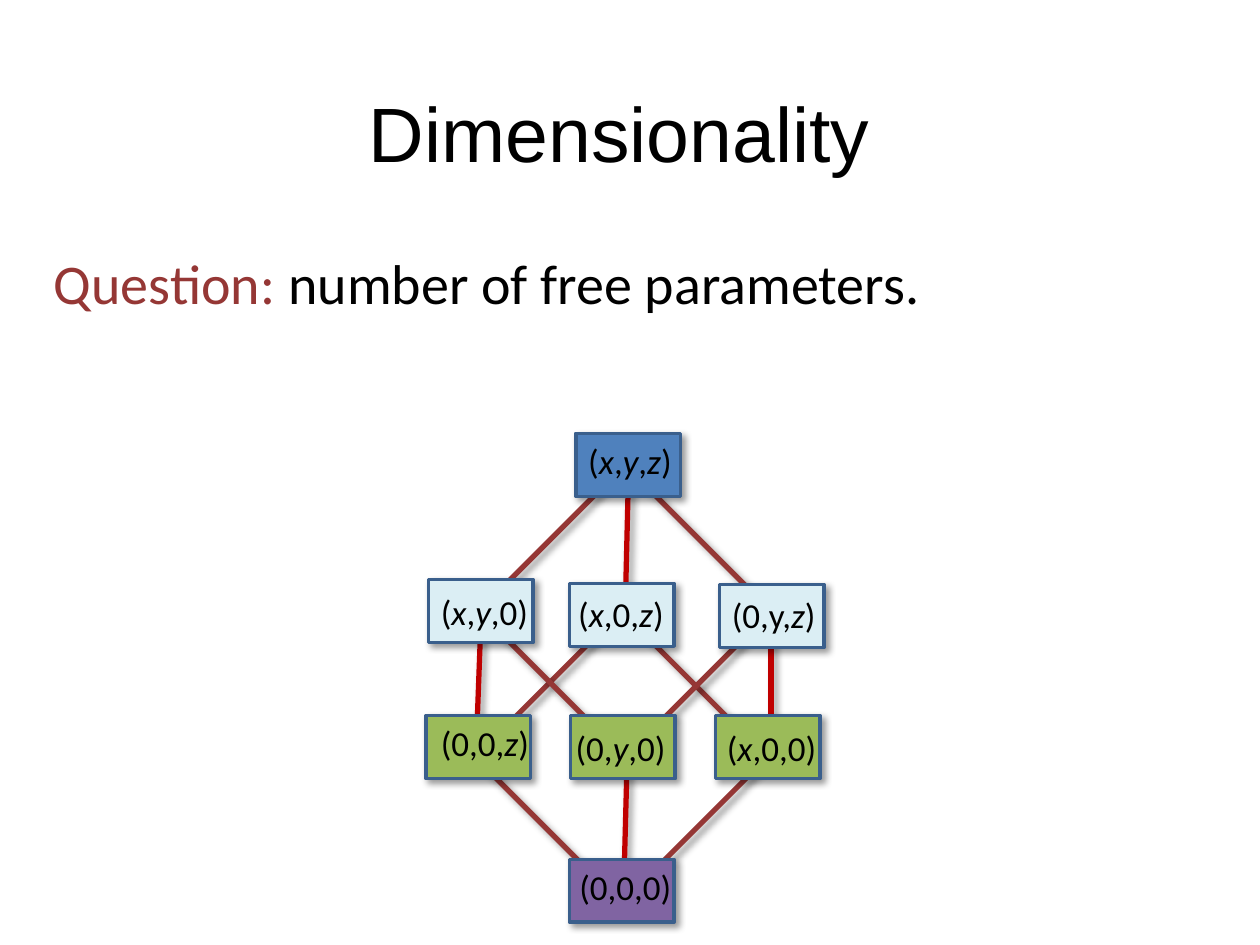
from dataclasses import dataclass

from lxml.etree import SubElement
from pptx import Presentation
from pptx.dml.color import RGBColor
from pptx.enum.shapes import MSO_CONNECTOR as Connector, MSO_SHAPE as Shape
from pptx.enum.text import MSO_ANCHOR as Anchor, PP_ALIGN as Align
from pptx.oxml.ns import qn
from pptx.util import Inches, Pt

COLORS = {
    "black": "000000",
    "question": "953735",
    "diamond": "953735",
    "link": "C00000",
    "outline": "3A5F8C",
    "three": "4F81BD",
    "two": "DBEEF4",
    "one": "9BBB59",
    "zero": "8064A2",
}
NODE_WIDTH, NODE_HEIGHT = 0.83, 0.5
LABEL_HEIGHT = 0.44
DIAMOND_SIDE = 1.64


@dataclass
class Node:
    """A lattice box with its label; *stars* mark italic letters."""
    label: str
    color: str
    left: float
    top: float
    label_left: float
    label_top: float
    label_width: float = 0.92


@dataclass
class Link:
    x1: float
    y1: float
    x2: float
    y2: float


NODES = [
    Node("(*x*,*y*,*z*)", "three", 4.57, 3.44, 4.57, 3.44),
    Node("(0,y,*z*)", "two", 5.71, 4.64, 5.71, 4.66),
    Node("(*x*,*y*,0)", "two", 3.4, 4.6, 3.4, 4.64, 0.93),
    Node("(0,0,0)", "zero", 4.52, 6.82, 4.5, 6.82, 0.93),
    Node("(*x*,0,0)", "one", 5.68, 5.68, 5.67, 5.72),
    Node("(0,0,*z*)", "one", 3.38, 5.68, 3.4, 5.68),
    Node("(*x*,0,*z*)", "two", 4.52, 4.63, 4.49, 4.65),
    Node("(0,*y*,0)", "one", 4.53, 5.68, 4.47, 5.72, 0.99),
]
LINKS = [
    Link(4.99, 3.69, 4.96, 4.93),
    Link(6.12, 4.85, 6.12, 6.01),
    Link(3.82, 4.85, 3.78, 5.93),
    Link(4.98, 5.93, 4.95, 7.07),
]


def rgb(name: str) -> RGBColor:
    return RGBColor.from_string(COLORS[name])


def add_shadow(item) -> None:
    """Give a shape or connector a soft shadow to the lower right."""
    effects = SubElement(item._element.spPr, qn("a:effectLst"))
    shadow = SubElement(effects, qn("a:outerShdw"), blurRad=str(Pt(4)),
                        dist=str(Pt(3)), dir=str(45 * 60000),
                        algn="tl", rotWithShape="0")
    color = SubElement(shadow, qn("a:srgbClr"), val=COLORS["black"])
    SubElement(color, qn("a:alpha"), val="40000")


def set_line(item, color: str, width: float) -> None:
    item.line.color.rgb = rgb(color)
    item.line.width = Pt(width)


def add_box(page, left: float, top: float, width: float, height: float):
    box = page.shapes.add_textbox(Inches(left), Inches(top),
                                  Inches(width), Inches(height))
    box.text_frame.word_wrap = True
    return box.text_frame


def add_span(para, text: str, size: float, font: str = "Calibri",
             color: str = "black", italic: bool = False) -> None:
    span = para.add_run()
    span.text = text
    span.font.size = Pt(size)
    span.font.name = font
    span.font.italic = italic
    span.font.color.rgb = rgb(color)


def add_diamond(page, left: float, top: float) -> None:
    side = Inches(DIAMOND_SIDE)
    diamond = page.shapes.add_shape(Shape.RECTANGLE, Inches(left), Inches(top),
                                    side, side)
    diamond.rotation = 315
    diamond.fill.background()
    set_line(diamond, "diamond", 3)
    add_shadow(diamond)


def add_link(page, link: Link) -> None:
    line = page.shapes.add_connector(Connector.STRAIGHT,
                                     Inches(link.x1), Inches(link.y1),
                                     Inches(link.x2), Inches(link.y2))
    set_line(line, "link", 3)
    add_shadow(line)


def add_node(page, node: Node) -> None:
    box = page.shapes.add_shape(Shape.RECTANGLE, Inches(node.left),
                                Inches(node.top), Inches(NODE_WIDTH),
                                Inches(NODE_HEIGHT))
    box.fill.solid()
    box.fill.fore_color.rgb = rgb(node.color)
    set_line(box, "outline", 2)
    add_shadow(box)


def add_label(page, node: Node) -> None:
    frame = add_box(page, node.label_left, node.label_top,
                    node.label_width, LABEL_HEIGHT)
    frame.word_wrap = False
    for index, part in enumerate(node.label.split("*")):
        add_span(frame.paragraphs[0], part, 20, italic=index % 2 == 1)


def main() -> None:
    deck = Presentation()
    deck.slide_width, deck.slide_height = Inches(10), Inches(7.5)
    page = deck.slides.add_slide(deck.slide_layouts[6])

    # Title
    title = add_box(page, 0.5, 0.42, 8.83, 1.25)
    title.vertical_anchor = Anchor.MIDDLE
    title.paragraphs[0].alignment = Align.CENTER
    add_span(title.paragraphs[0], "Dimensionality", 44, "Arial")

    # Question
    para = add_box(page, 0.33, 1.92, 9.5, 2.58).paragraphs[0]
    para.space_before = Pt(6.4)
    add_span(para, "Question:", 32, color="question")
    add_span(para, " number of free parameters.", 32)

    # Lattice edges, behind the boxes
    add_diamond(page, 4.11, 5.19)
    for link in LINKS:
        add_link(page, link)
    add_diamond(page, 4.14, 4.03)

    # Lattice boxes, then their labels
    for node in NODES:
        add_node(page, node)
    for node in NODES:
        add_label(page, node)

    deck.save("out.pptx")


if __name__ == "__main__":
    main()
